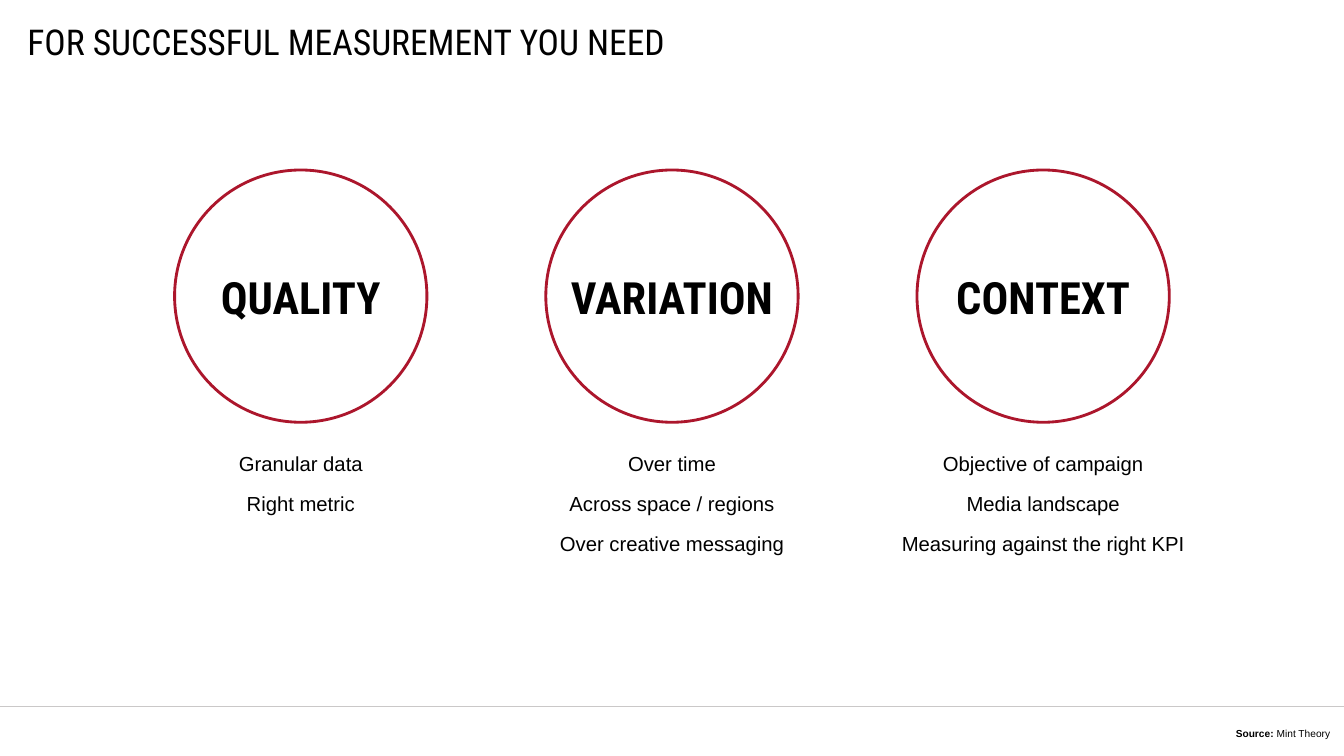
from pptx import Presentation
from pptx.dml.color import RGBColor
from pptx.enum.shapes import MSO_CONNECTOR, MSO_SHAPE
from pptx.enum.text import MSO_ANCHOR, MSO_AUTO_SIZE, PP_ALIGN
from pptx.oxml.ns import qn
from pptx.util import Pt
from lxml.etree import SubElement

PX = 9144  # 100 px to the inch
HEAD, BODY = "Roboto Condensed", "Arial"


def box(*sides):
    """Turn px lengths into EMU."""
    return [side * PX for side in sides]


def write(par, text, font, size, bold=False, align=PP_ALIGN.CENTER):
    par.alignment = align
    run = par.add_run()
    run.text = text
    run.font.name = font
    run.font.size = Pt(size)
    run.font.bold = bold
    run.font.color.rgb = RGBColor.from_string("000000")


deck = Presentation()
deck.slide_width, deck.slide_height = box(1470, 827)
slide = deck.slides.add_slide(deck.slide_layouts[5])
shapes = slide.shapes

# Footer rule and source
rule = shapes.add_connector(MSO_CONNECTOR.STRAIGHT, *box(0, 773, 1470, 773))
rule.line.color.rgb = RGBColor.from_string("CAC8C8")
rule.line.width = Pt(0.5)
SubElement(rule._element.spPr, qn("a:effectLst"))

source = shapes.add_textbox(*box(1114, 788, 341, 16))

# Title
title = shapes.title
title.left, title.top, title.width, title.height = box(30, 30, 1358, 31)

for item in (title, source):
    frame = item.text_frame
    frame.margin_left = frame.margin_right = 0
    frame.margin_top = frame.margin_bottom = 0
    frame.vertical_anchor = MSO_ANCHOR.MIDDLE
    frame.word_wrap = True
title.text_frame.auto_size = MSO_AUTO_SIZE.NONE
write(title.text_frame.paragraphs[0], "FOR SUCCESSFUL MEASUREMENT YOU NEED",
      HEAD, 28, align=PP_ALIGN.LEFT)

source.text_frame.auto_size = MSO_AUTO_SIZE.SHAPE_TO_FIT_TEXT
credit = source.text_frame.paragraphs[0]
credit.line_spacing = Pt(19)
write(credit, "Source: ", BODY, 8, True, PP_ALIGN.RIGHT)
write(credit, "Mint Theory", BODY, 8, align=PP_ALIGN.RIGHT)

# Three needs: a ring with its name, and a list below
needs = [
    ("QUALITY", ["Granular data", "Right metric"]),
    ("VARIATION", ["Over time", "Across space / regions",
                   "Over creative messaging"]),
    ("CONTEXT", ["Objective of campaign", "Media landscape",
                 "Measuring against the right KPI"]),
]
RING, NAME, LIST = 276, 262, 338
for col, (name, points) in enumerate(needs):
    mid = 329 + 406 * col

    ring = shapes.add_shape(MSO_SHAPE.OVAL,
                            *box(mid - RING // 2, 186, RING, RING))
    ring.shadow.inherit = False
    ring.fill.background()
    ring.line.color.rgb = RGBColor.from_string("AC162C")
    ring.line.width = Pt(2.25)

    label = shapes.add_textbox(*box(mid - NAME // 2, 290, NAME, 69)).text_frame
    label.word_wrap = True
    write(label.paragraphs[0], name, HEAD, 35, True)

    notes = shapes.add_textbox(*box(mid - LIST // 2, 489, LIST, 151)).text_frame
    notes.word_wrap = True
    for row, point in enumerate(points):
        par = notes.add_paragraph() if row else notes.paragraphs[0]
        if row:
            par.space_before = Pt(12)
        write(par, point, BODY, 16)

deck.save("out.pptx")
